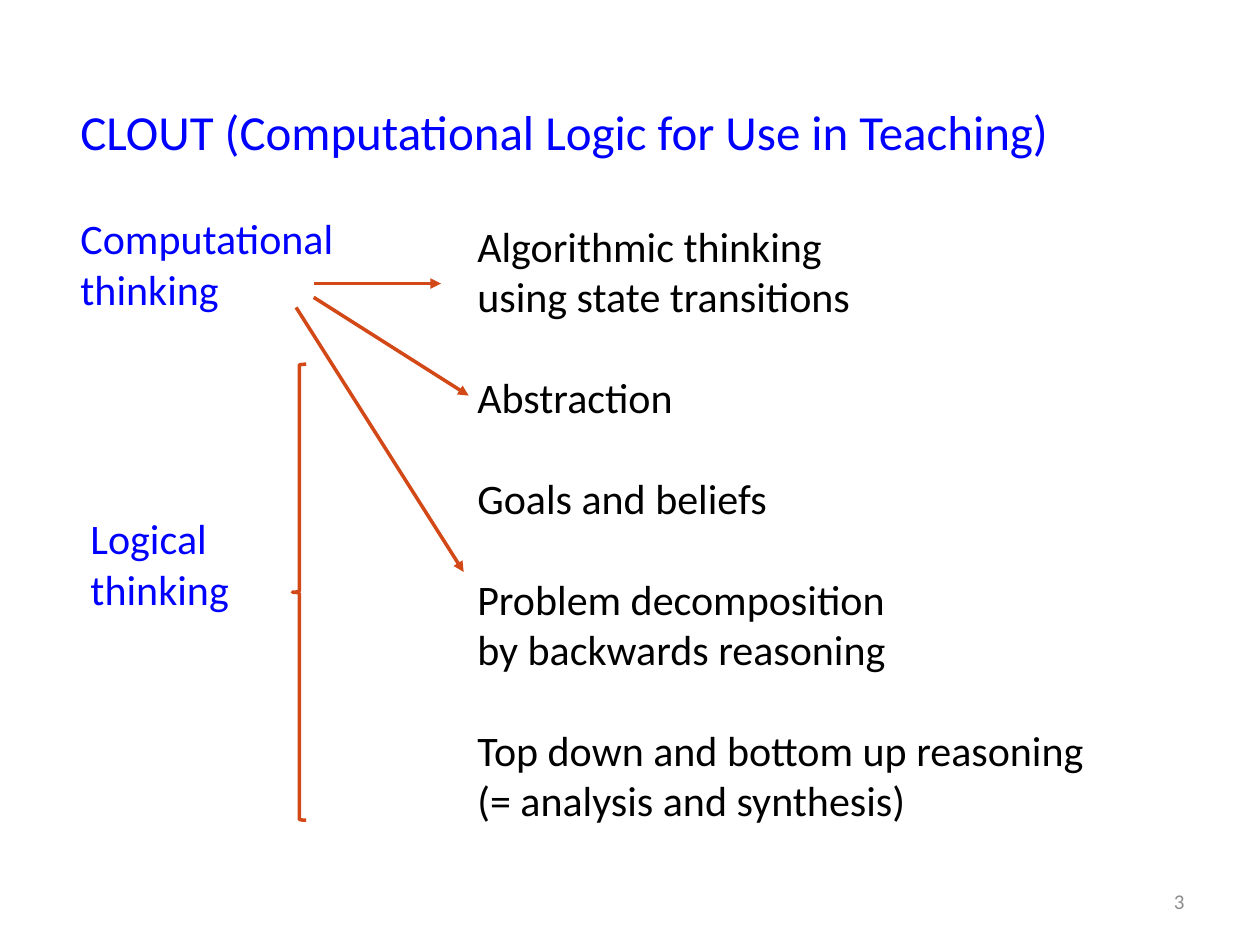
from typing import NamedTuple

from lxml.etree import SubElement
from pptx import Presentation
from pptx.dml.color import RGBColor
from pptx.enum.shapes import MSO_CONNECTOR as Connector, MSO_SHAPE as Shape
from pptx.enum.text import MSO_ANCHOR as Anchor, PP_ALIGN as Align
from pptx.oxml.ns import qn
from pptx.util import Inches, Pt

COLORS = {"heading": "0000FF", "body": "000000", "number": "8C8C8C", "accent": "D34817"}
FONT = "Calibri"
LINE_WIDTH = Pt(2)
TOPIC_GAP = Pt(28.8)  # one line of 24 pt text


class Label(NamedTuple):
    box: tuple[float, float, float, float]
    topics: list[list[str]]  # lines grouped by topic
    color: str = "heading"
    size: int = 24
    anchor: Anchor = Anchor.TOP
    align: Align = Align.LEFT
    wrap: bool = True


class Arrow(NamedTuple):
    start: tuple[float, float]
    end: tuple[float, float]


LABELS = [
    Label((0.54, 0.41, 8.96, 1.25), [["CLOUT (Computational Logic for Use in Teaching)"]],
          size=28, anchor=Anchor.MIDDLE),
    Label((7.17, 6.95, 2.33, 0.4), [["3"]], "number", 12, Anchor.MIDDLE, Align.RIGHT),
    Label((3.69, 1.7, 5.06, 4.9), [
        ["Algorithmic thinking", "using state transitions"],
        ["Abstraction"],
        ["Goals and beliefs"],
        ["Problem decomposition", "by backwards reasoning"],
        ["Top down and bottom up reasoning", "(= analysis and synthesis)"],
    ], "body", wrap=False),
    Label((0.54, 1.64, 3.23, 0.91), [["Computational", "thinking"]]),
    Label((0.62, 4.02, 2.13, 0.91), [["Logical", "thinking"]]),
]

# From computational thinking to its topics
ARROWS = [
    Arrow((2.49, 2.25), (3.5, 2.25)),
    Arrow((2.35, 2.44), (3.68, 4.54)),
    Arrow((2.49, 2.36), (3.72, 3.14)),
]


def rgb(name: str) -> RGBColor:
    return RGBColor.from_string(COLORS[name])


def style_line(line) -> None:
    line.color.rgb = rgb("accent")
    line.width = LINE_WIDTH


def draw_label(slide, label: Label) -> None:
    frame = slide.shapes.add_textbox(*map(Inches, label.box)).text_frame
    frame.word_wrap = label.wrap
    frame.vertical_anchor = label.anchor
    paragraph = None
    for topic_index, topic in enumerate(label.topics):
        for line_index, line in enumerate(topic):
            paragraph = frame.add_paragraph() if paragraph else frame.paragraphs[0]
            paragraph.alignment = label.align
            if topic_index and not line_index:
                paragraph.space_before = TOPIC_GAP
            run = paragraph.add_run()
            run.text = line
            run.font.name = FONT
            run.font.size = Pt(label.size)
            run.font.color.rgb = rgb(label.color)


def draw_brace(slide, box: tuple[float, float, float, float]) -> None:
    brace = slide.shapes.add_shape(Shape.RIGHT_BRACE, *map(Inches, box))
    brace.rotation = 180
    brace.shadow.inherit = False
    brace.fill.background()
    style_line(brace.line)


def draw_arrow(slide, arrow: Arrow) -> None:
    connector = slide.shapes.add_connector(
        Connector.STRAIGHT, *map(Inches, arrow.start + arrow.end))
    style_line(connector.line)
    properties = connector._element.spPr
    SubElement(properties.find(qn("a:ln")), qn("a:tailEnd"), type="triangle")
    SubElement(properties, qn("a:effectLst"))


def main() -> None:
    deck = Presentation()
    deck.slide_width, deck.slide_height = Inches(10), Inches(7.5)
    slide = deck.slides.add_slide(deck.slide_layouts[6])

    # Title, slide number, topics and the two kinds of thinking
    for label in LABELS:
        draw_label(slide, label)

    # Brace gathering the topics of logical thinking
    draw_brace(slide, (2.32, 2.89, 0.11, 3.62))

    for arrow in ARROWS:
        draw_arrow(slide, arrow)

    deck.save("out.pptx")


if __name__ == "__main__":
    main()
